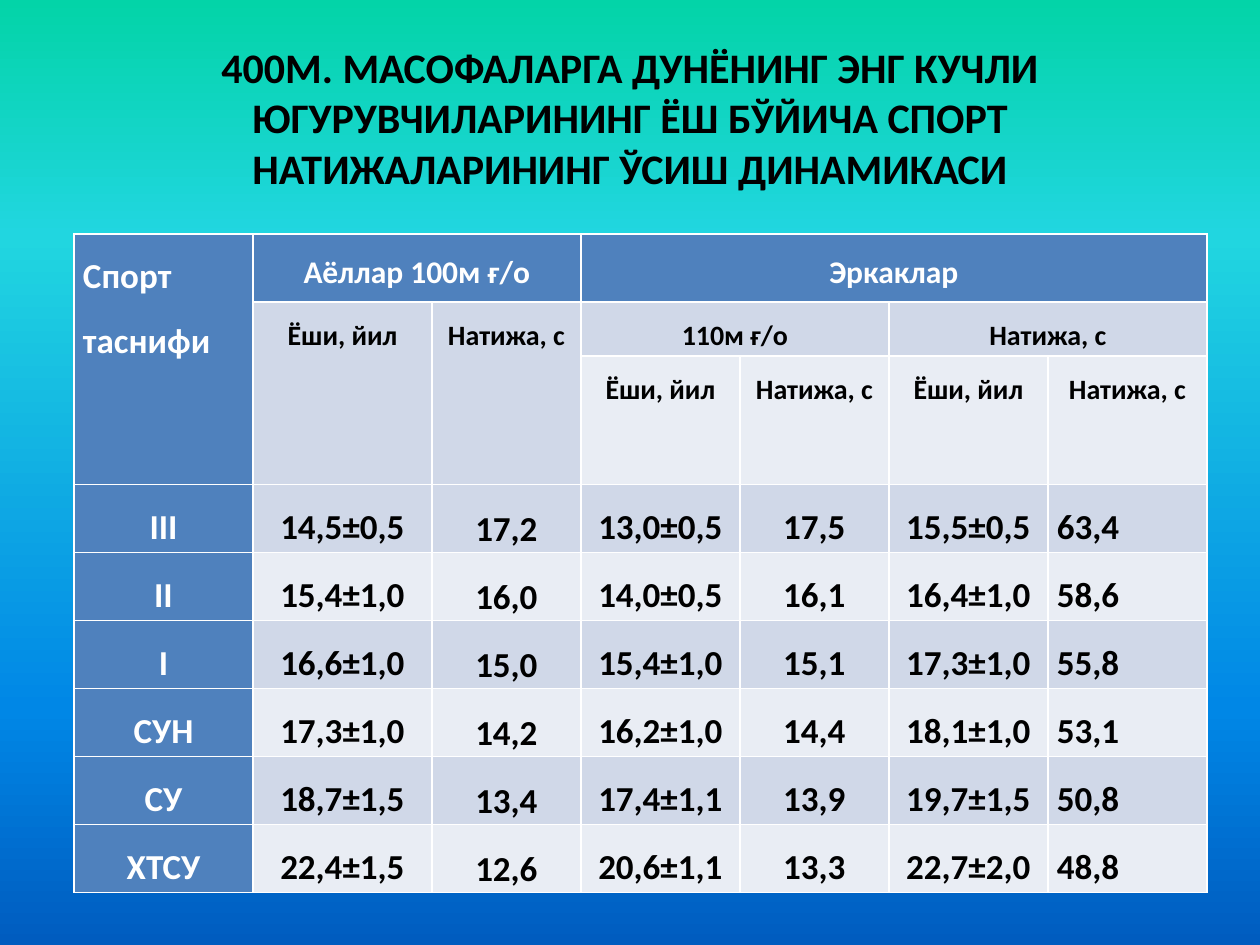
"""Build a slide with a table of sport results by age and rank."""
from dataclasses import dataclass
from typing import Optional

import pptx
import pptx.dml.color
import pptx.enum.text
import pptx.oxml.ns
import pptx.slide
import pptx.table
import pptx.util
from lxml import etree

Align = pptx.enum.text.PP_ALIGN
Anchor = pptx.enum.text.MSO_ANCHOR
EMU_PER_PX = 914400 / 126


@dataclass(frozen=True)
class Theme:
    font: str = "Calibri"
    dark: str = "000000"
    light: str = "FFFFFF"
    header: str = "4F81BD"
    bands: tuple = ("D0D8E8", "E9EDF4")
    gradient: tuple = ((0, "03D4A8"), (25, "21D6E0"), (75, "0087E6"), (100, "005CBF"))
    title_size: int = 24
    group_size: int = 18
    column_size: int = 16
    body_size: int = 20


@dataclass(frozen=True)
class Heading:
    row: int
    column: int
    text: str
    size: int
    row_span: int = 1
    column_span: int = 1
    align: Optional[Align] = Align.CENTER


THEME = Theme()
TITLE = ("400М. МАСОФАЛАРГА ДУНЁНИНГ ЭНГ КУЧЛИ ЮГУРУВЧИЛАРИНИНГ ЁШ БЎЙИЧА "
         "СПОРТ НАТИЖАЛАРИНИНГ ЎСИШ ДИНАМИКАСИ")
COLUMN_WIDTHS = (179, 179, 149, 159, 149, 159, 159)
HEADING_HEIGHTS = (68, 54, 58)
RESULT_HEIGHT = 68
AGE, RESULT = "Ёши, йил", "Натижа, с"
HEADINGS = (
    Heading(0, 0, "Спорт таснифи", THEME.body_size, row_span=3, align=None),
    Heading(0, 1, "Аёллар 100м ғ/о", THEME.group_size, column_span=2),
    Heading(0, 3, "Эркаклар", THEME.group_size, column_span=4),
    Heading(1, 1, AGE, THEME.column_size, row_span=2),
    Heading(1, 2, RESULT, THEME.column_size, row_span=2),
    Heading(1, 3, "110м ғ/о", THEME.column_size, column_span=2),
    Heading(1, 5, RESULT, THEME.column_size, column_span=2),
    *(Heading(2, column, text, THEME.column_size)
      for column, text in enumerate((AGE, RESULT) * 2, start=3)),
)
RESULTS = (
    ("III", "14,5±0,5", "17,2", "13,0±0,5", "17,5", "15,5±0,5", "63,4"),
    ("II", "15,4±1,0", "16,0", "14,0±0,5", "16,1", "16,4±1,0", "58,6"),
    ("I", "16,6±1,0", "15,0", "15,4±1,0", "15,1", "17,3±1,0", "55,8"),
    ("СУН", "17,3±1,0", "14,2", "16,2±1,0", "14,4", "18,1±1,0", "53,1"),
    ("СУ", "18,7±1,5", "13,4", "17,4±1,1", "13,9", "19,7±1,5", "50,8"),
    ("ХТСУ", "22,4±1,5", "12,6", "20,6±1,1", "13,3", "22,7±2,0", "48,8"),
)


def px(length: int) -> pptx.util.Emu:
    """Turn pixels into EMU."""
    return pptx.util.Emu(round(length * EMU_PER_PX))


def rgb(value: str) -> pptx.dml.color.RGBColor:
    """Turn a hex string into a colour."""
    return pptx.dml.color.RGBColor.from_string(value)


def paint_background(slide: pptx.slide.Slide) -> None:
    """Fill the background with the vertical theme gradient."""
    qn = pptx.oxml.ns.qn
    fill = slide.background.fill
    fill.gradient()
    fill.gradient_angle = 270
    stops = next(slide.element.iter(qn("a:gsLst")))
    for stop in list(stops):
        stops.remove(stop)
    for percent, color in THEME.gradient:
        stop = etree.SubElement(stops, qn("a:gs"), pos=str(percent * 1000))
        etree.SubElement(stop, qn("a:srgbClr"), val=color)


def write(frame, text: str, size: int, color: str, align: Optional[Align]) -> None:
    """Write one bold paragraph into a text frame."""
    frame.text = text
    paragraph = frame.paragraphs[0]
    paragraph.alignment = align
    paragraph.font.name = THEME.font
    paragraph.font.size = pptx.util.Pt(size)
    paragraph.font.bold = True
    paragraph.font.color.rgb = rgb(color)


def write_cell(table: pptx.table.Table, heading: Heading) -> None:
    """Write one table cell in the header or body colours."""
    cell = table.cell(heading.row, heading.column)
    in_header = heading.row == 0 or heading.column == 0
    write(cell.text_frame, heading.text, heading.size,
          THEME.light if in_header else THEME.dark, heading.align)
    cell.text_frame.paragraphs[0].line_spacing = 1.5


def prepare_cells(table: pptx.table.Table) -> None:
    """Set the margins and banded fills of every cell."""
    for row_index, row in enumerate(table.rows):
        for column_index, cell in enumerate(row.cells):
            in_header = row_index == 0 or column_index == 0
            cell.margin_left = cell.margin_right = px(9)
            cell.margin_top = cell.margin_bottom = 0
            cell.fill.solid()
            cell.fill.fore_color.rgb = rgb(
                THEME.header if in_header else THEME.bands[(row_index - 1) % 2])


def add_results(slide: pptx.slide.Slide) -> None:
    """Add the table with its merged headings and results."""
    heights = HEADING_HEIGHTS + (RESULT_HEIGHT,) * len(RESULTS)
    table = slide.shapes.add_table(
        len(heights), len(COLUMN_WIDTHS), px(74), px(234),
        px(sum(COLUMN_WIDTHS)), px(sum(heights))).table
    table.first_col = True
    for column, width in zip(table.columns, COLUMN_WIDTHS):
        column.width = px(width)
    for row, height in zip(table.rows, heights):
        row.height = px(height)
    prepare_cells(table)
    for heading in HEADINGS:
        if heading.row_span * heading.column_span > 1:
            table.cell(heading.row, heading.column).merge(table.cell(
                heading.row + heading.row_span - 1,
                heading.column + heading.column_span - 1))
        write_cell(table, heading)
    last = len(COLUMN_WIDTHS) - 1
    for row_index, values in enumerate(RESULTS, start=len(HEADING_HEIGHTS)):
        for column_index, value in enumerate(values):
            align = None if column_index == last else Align.CENTER
            write_cell(table, Heading(row_index, column_index, value,
                                      THEME.body_size, align=align))
        table.cell(row_index, 2).vertical_anchor = Anchor.MIDDLE


def main() -> None:
    """Build and save the presentation."""
    presentation = pptx.Presentation()
    presentation.slide_width, presentation.slide_height = px(1260), px(945)
    slide = presentation.slides.add_slide(presentation.slide_layouts[5])
    paint_background(slide)
    title = slide.shapes.title
    title.left, title.top, title.width, title.height = px(63), px(38), px(1134), px(158)
    title.text_frame.vertical_anchor = Anchor.MIDDLE
    write(title.text_frame, TITLE, THEME.title_size, THEME.dark, Align.CENTER)
    add_results(slide)
    presentation.save("out.pptx")


if __name__ == "__main__":
    main()
